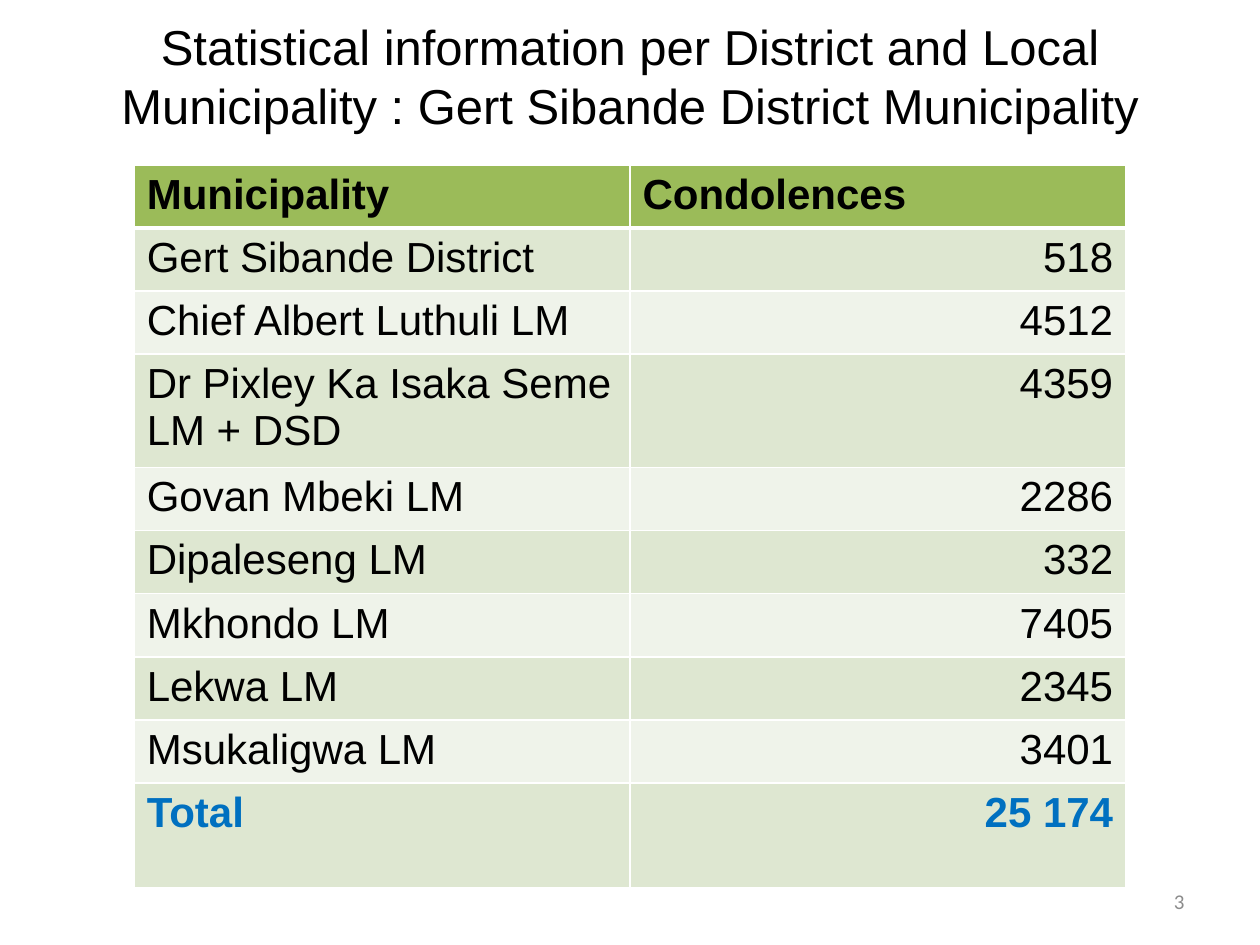
from dataclasses import dataclass

from lxml import etree
from pptx import Presentation, util as u
from pptx.dml.color import RGBColor
from pptx.enum import text
from pptx.oxml import ns


@dataclass(frozen=True)
class Theme:
    font: str = "Arial"
    number_font: str = "Calibri"
    ink: str = "000000"
    total: str = "0070C0"
    muted: str = "8C8C8C"
    header: str = "9BBB59"
    bands: tuple = ("DEE7D1", "EFF3EA")
    rule: str = "FFFFFF"
    title_size: int = 28
    table_size: int = 24
    number_size: int = 12


class SlideBuilder:
    def __init__(self, deck, theme):
        self.deck, self.theme = deck, theme
        self.page = deck.slides.add_slide(deck.slide_layouts[6])

    def area(self, left, top, width, height):
        """Turn shares of the slide into lengths."""
        across, down = self.deck.slide_width, self.deck.slide_height
        return [u.Emu(round(share * side)) for share, side in
                zip((left, top, width, height), (across, down) * 2)]

    def add_span(self, para, words, size, color, align, font=None, bold=False):
        para.alignment = align
        span = para.add_run()
        span.text = words
        span.font.name = font or self.theme.font
        span.font.size = u.Pt(size)
        span.font.bold = bold
        span.font.color.rgb = RGBColor.from_string(color)

    def label(self, place, words, size, color, align, font=None):
        box = self.page.shapes.add_textbox(*self.area(*place))
        frame = box.text_frame
        frame.word_wrap = True
        frame.vertical_anchor = text.MSO_ANCHOR.MIDDLE
        self.add_span(frame.paragraphs[0], words, size, color, align, font)

    def border(self, cell, top, bottom):
        props = cell._tc.get_or_add_tcPr()
        widths = {"lnL": 1, "lnR": 1, "lnT": top, "lnB": bottom}
        for order, (side, width) in enumerate(widths.items()):
            line = etree.Element(ns.qn(f"a:{side}"), w=str(u.Pt(width)))
            fill = etree.SubElement(line, ns.qn("a:solidFill"))
            etree.SubElement(fill, ns.qn("a:srgbClr"), val=self.theme.rule)
            props.insert(order, line)

    def table(self, place, records, row_height, tall_rows, tall_height):
        theme = self.theme
        grid = self.page.shapes.add_table(
            len(records), len(records[0]), *self.area(*place)).table
        last = len(records) - 1
        for r, record in enumerate(records):
            grid.rows[r].height = u.Inches(
                tall_height if r in tall_rows else row_height)
            shade = theme.bands[(r - 1) % 2] if r else theme.header
            color = theme.total if r == last else theme.ink
            for c, words in enumerate(record):
                cell = grid.cell(r, c)
                cell.fill.solid()
                cell.fill.fore_color.rgb = RGBColor.from_string(shade)
                align = text.PP_ALIGN.RIGHT if r and c else text.PP_ALIGN.LEFT
                self.add_span(cell.text_frame.paragraphs[0], words,
                              theme.table_size, color, align,
                              bold=r in (0, last))
                self.border(cell, top=3 if r == 1 else 1,
                            bottom=3 if r == 0 else 1)


CONDOLENCES = [
    ("Municipality", "Condolences"),
    ("Gert Sibande District", "518"),
    ("Chief Albert Luthuli LM", "4512"),
    ("Dr Pixley Ka Isaka Seme LM + DSD", "4359"),
    ("Govan Mbeki LM", "2286"),
    ("Dipaleseng LM", "332"),
    ("Mkhondo LM", "7405"),
    ("Lekwa LM", "2345"),
    ("Msukaligwa LM", "3401"),
    ("Total", "25 174"),
]


def main():
    deck = Presentation()
    deck.slide_width, deck.slide_height = u.Inches(10), u.Inches(7.5)
    theme = Theme()
    slide = SlideBuilder(deck, theme)

    # Title
    slide.label((0.05, 0, 0.9, 0.16),
                "Statistical information per District and Local Municipality"
                " : Gert Sibande District Municipality",
                theme.title_size, theme.ink, text.PP_ALIGN.CENTER)

    # Condolences per municipality
    slide.table((1.065 / 10, 1.31 / 7.5, 7.87 / 10, 5.73 / 7.5), CONDOLENCES,
                row_height=0.46, tall_rows=(3, 9), tall_height=0.83)

    # Page number
    slide.label((7.17 / 10, 6.95 / 7.5, 2.33 / 10, 0.4 / 7.5), "3",
                theme.number_size, theme.muted, text.PP_ALIGN.RIGHT,
                theme.number_font)

    deck.save("out.pptx")


if __name__ == "__main__":
    main()
